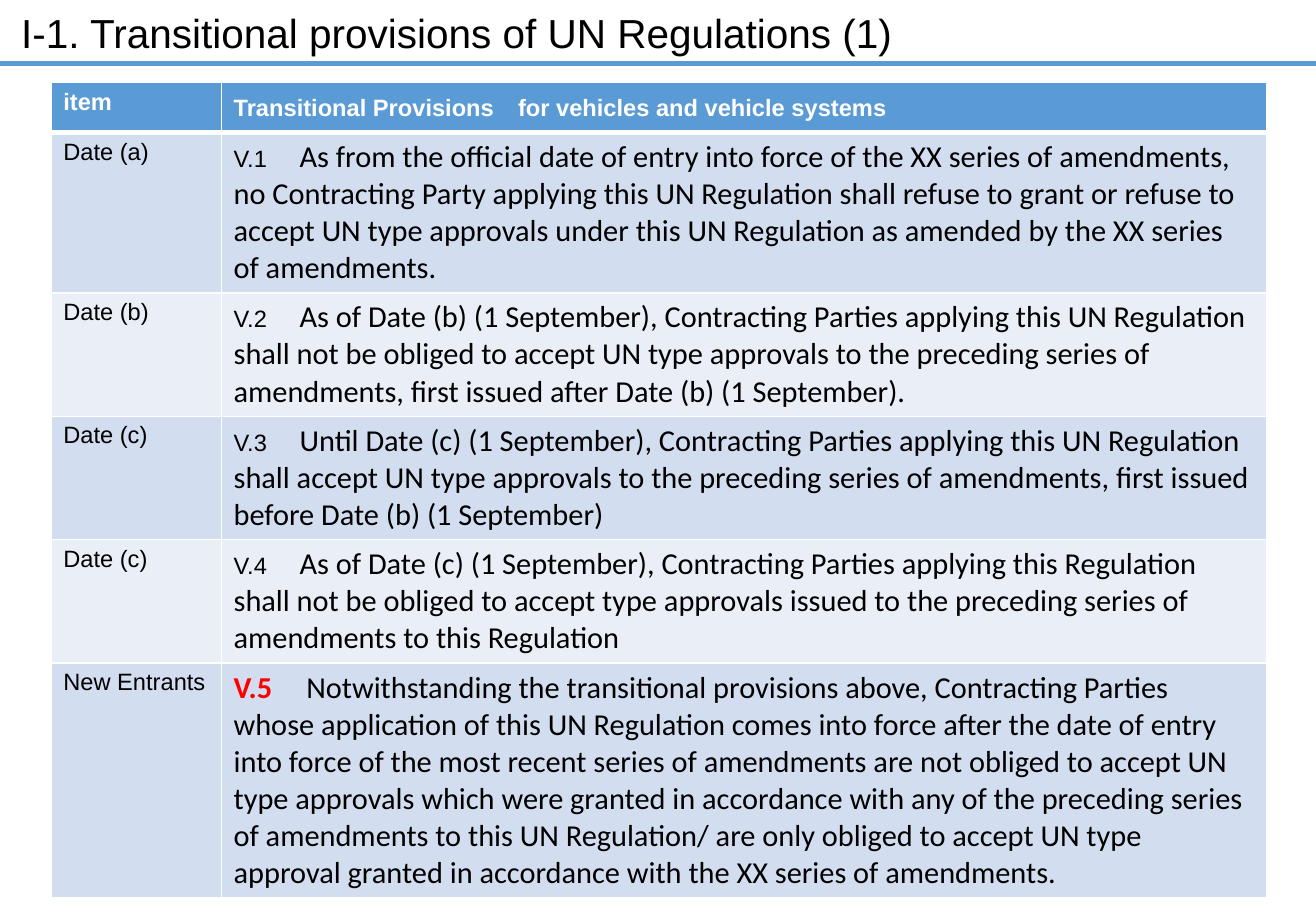
from dataclasses import dataclass

from lxml.etree import SubElement as Sub
from pptx import Presentation
from pptx.dml.color import RGBColor as Rgb
from pptx.enum.shapes import MSO_CONNECTOR as Conn
from pptx.enum.text import MSO_ANCHOR as Anchor, MSO_AUTO_SIZE as Auto, PP_ALIGN as Align
from pptx.oxml.ns import qn
from pptx.util import Cm, Pt


@dataclass(frozen=True)
class Theme:
    blue: str = "5B9BD5"
    bands: tuple = ("D2DEEF", "EAEFF7")
    white: str = "FFFFFF"
    black: str = "000000"
    red: str = "FF0000"
    head: str = "Arial"
    body: str = "Calibri"
    title: int = 24
    small: int = 14
    large: int = 18


# Wording: item, clause number, clause
HEAD = ("item", "Transitional Provisions\u3000for vehicles and vehicle systems".replace("\u3000", "　"))
ROWS = [
    ("Date (a)", "V.1", "As from the official date of entry into force of the XX series of "
     "amendments, no Contracting Party applying this UN Regulation shall refuse to grant or "
     "refuse to accept UN type approvals under this UN Regulation as amended by the XX series "
     "of amendments."),
    ("Date (b)", "V.2", "As of Date (b) (1 September), Contracting Parties applying this UN "
     "Regulation shall not be obliged to accept UN type approvals to the preceding series of "
     "amendments, first issued after Date (b) (1 September)."),
    ("Date (c)", "V.3", "Until Date (c) (1 September), Contracting Parties applying this UN "
     "Regulation shall accept UN type approvals to the preceding series of amendments, first "
     "issued before Date (b) (1 September)"),
    ("Date (c)", "V.4", "As of Date (c) (1 September), Contracting Parties applying this "
     "Regulation shall not be obliged to accept type approvals issued to the preceding series "
     "of amendments to this Regulation"),
    ("New Entrants", "V.5", "Notwithstanding the transitional provisions above, Contracting "
     "Parties whose application of this UN Regulation comes into force after the date of entry "
     "into force of the most recent series of amendments are not obliged to accept UN type "
     "approvals which were granted in accordance with any of the preceding series of amendments "
     "to this UN Regulation/ are only obliged to accept UN type approval granted in accordance "
     "with the XX series of amendments."),
]


class Deck:
    def __init__(self, theme):
        self.theme = theme
        self.prs = Presentation()
        self.prs.slide_width, self.prs.slide_height = Cm(27.51), Cm(19.05)
        self.slide = self.prs.slides.add_slide(self.prs.slide_layouts[5])

    def style(self, run, size, face, color, bold=False):
        font = run.font
        font.size, font.name, font.bold = Pt(size), face, bold
        font.color.rgb = Rgb.from_string(color)

    def title(self, text, x, y, w, h):
        box = self.slide.shapes.title
        box.left, box.top, box.width, box.height = Cm(x), Cm(y), Cm(w), Cm(h)
        frame = box.text_frame
        frame.text = text
        frame.word_wrap, frame.auto_size = True, Auto.NONE
        frame.vertical_anchor, frame.margin_left = Anchor.TOP, Cm(0.49)
        para = frame.paragraphs[0]
        para.alignment = Align.LEFT
        self.style(para.runs[0], self.theme.title, self.theme.head, self.theme.black)

    def rule(self, y, width):
        line = self.slide.shapes.add_connector(
            Conn.STRAIGHT, 0, Cm(y), self.prs.slide_width, Cm(y))
        line.line.color.rgb = Rgb.from_string(self.theme.blue)
        line.line.width = Pt(width)
        Sub(line._element.spPr, qn("a:effectLst"))

    def table(self, x, y, cols, rows, height, row):
        frame = self.slide.shapes.add_table(
            rows, len(cols), Cm(x), Cm(y), Cm(sum(cols)), Cm(height))
        for col, width in zip(frame.table.columns, cols):
            col.width = Cm(width)
        for line in frame.table.rows:
            line.height = Cm(row)
        return frame.table

    def cell(self, cell, fill, top=1, bottom=1):
        # Borders come before the fill in the cell properties
        props = cell._tc.get_or_add_tcPr()
        for side, width in (("L", 1), ("R", 1), ("T", top), ("B", bottom)):
            edge = Sub(props, qn("a:ln" + side), w=str(Pt(width)))
            Sub(Sub(edge, qn("a:solidFill")), qn("a:srgbClr"), val=self.theme.white)
        cell.fill.solid()
        cell.fill.fore_color.rgb = Rgb.from_string(fill)

    def label(self, cell, text, color, bold=False):
        cell.text_frame.text = text
        run = cell.text_frame.paragraphs[0].runs[0]
        self.style(run, self.theme.small, self.theme.head, color, bold)

    def clause(self, cell, mark, text, key):
        t = self.theme
        para = cell.text_frame.paragraphs[0]
        para.text = mark + "\t"
        look = (t.large, t.body, t.red, True) if key else (t.small, t.head, t.black)
        self.style(para.runs[0], *look)
        run = para.add_run()
        run.text = text
        self.style(run, t.large, t.body, t.black)
        # Tab stop between the number and the clause
        tabs = Sub(para._p.get_or_add_pPr(), qn("a:tabLst"))
        Sub(tabs, qn("a:tab"), pos=str(Cm(1.52 if key else 1.38)), algn="l")


def main():
    theme = Theme()
    deck = Deck(theme)

    # Title and rule
    deck.title("I-1. Transitional provisions of UN Regulations (1)", -0.05, 0.03, 22.94, 1.27)
    deck.rule(1.32, 3)

    # Table header
    grid = deck.table(1.07, 1.73, (3.56, 21.84), len(ROWS) + 1, 16.79, 1.04)
    for col, text in enumerate(HEAD):
        cell = grid.cell(0, col)
        deck.cell(cell, theme.blue, bottom=3)
        deck.label(cell, text, theme.white, True)

    # Banded rows
    for row, (item, mark, text) in enumerate(ROWS, 1):
        left, right = grid.cell(row, 0), grid.cell(row, 1)
        for cell in (left, right):
            deck.cell(cell, theme.bands[(row - 1) % 2], top=3 if row == 1 else 1)
        deck.label(left, item, theme.black)
        deck.clause(right, mark, text, key=mark == "V.5")

    deck.prs.save("out.pptx")


if __name__ == "__main__":
    main()
